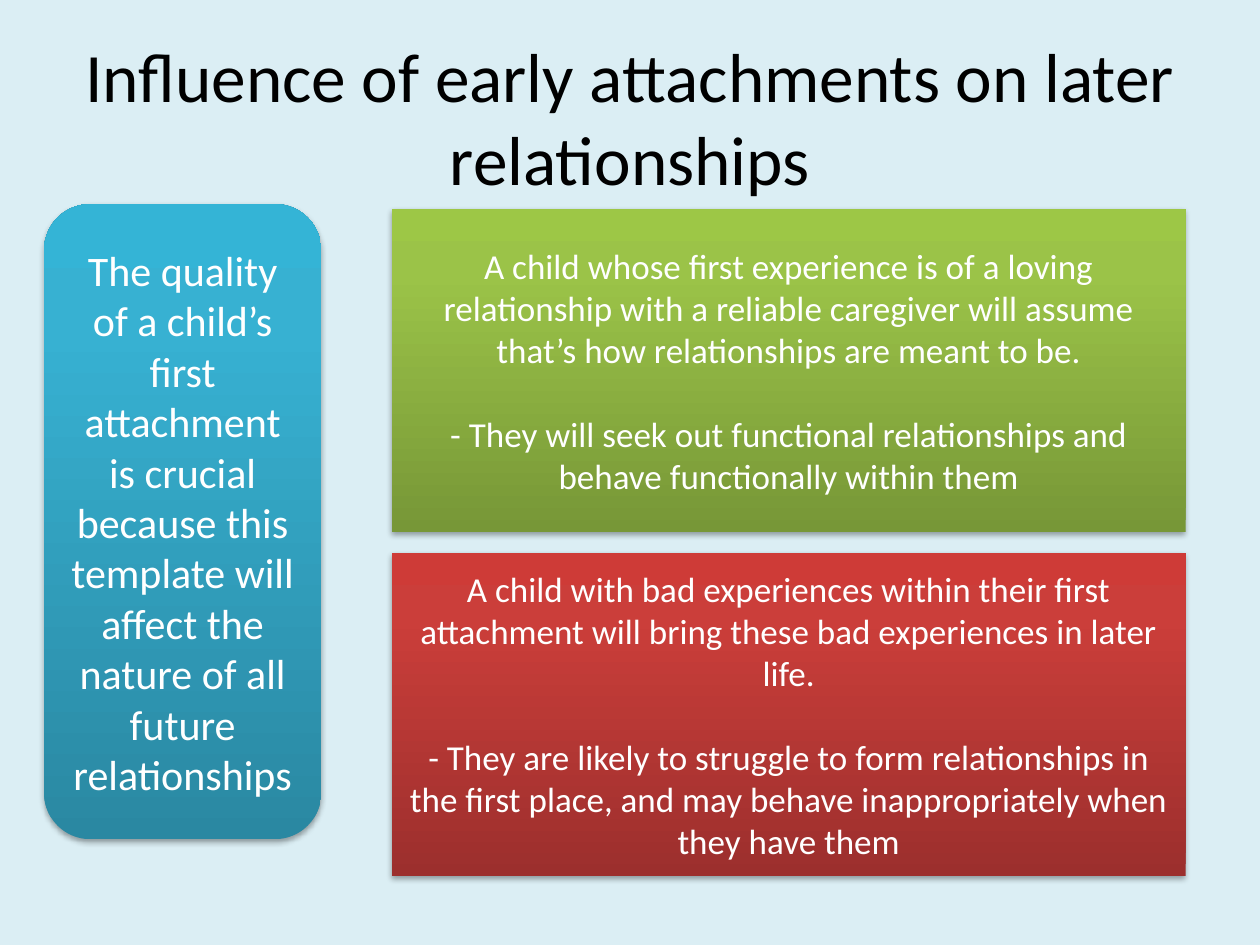
from copy import deepcopy
from dataclasses import dataclass

from lxml.etree import SubElement
from pptx import Presentation
from pptx.dml.color import RGBColor
from pptx.enum.shapes import MSO_SHAPE as Shape
from pptx.enum.text import MSO_ANCHOR as Anchor, MSO_AUTO_SIZE as AutoSize, PP_ALIGN as Align
from pptx.oxml.ns import qn
from pptx.util import Inches, Pt

FONT = "Calibri"
STOPS = (0, 0.8, 1)


@dataclass
class Panel:
    kind: Shape
    left: float
    top: float
    width: float
    height: float
    colors: tuple[str, str, str]
    size: float
    paragraphs: list[str]


def rgb(color: str) -> RGBColor:
    return RGBColor.from_string(color)


def write(box, *paragraphs: str, size: float, color: str, gap: float = 0) -> None:
    """Write centred paragraphs, with a gap in points between them."""
    frame = box.text_frame
    frame.word_wrap = True
    frame.auto_size = AutoSize.NONE
    frame.vertical_anchor = Anchor.MIDDLE
    for index, text in enumerate(paragraphs):
        para = frame.add_paragraph() if index else frame.paragraphs[0]
        para.alignment = Align.CENTER
        para.space_before = Pt(gap if index else 0)
        span = para.add_run()
        span.text = text
        span.font.name = FONT
        span.font.size = Pt(size)
        span.font.color.rgb = rgb(color)


def place(box, left: float, top: float, width: float, height: float) -> None:
    box.left, box.top = Inches(left), Inches(top)
    box.width, box.height = Inches(width), Inches(height)


def fill_gradient(box, colors: tuple[str, str, str]) -> None:
    """Fill with three stops, running from bottom to top."""
    box.fill.gradient()
    box.fill.gradient_angle = 90
    stop_list = box._element.spPr.find(".//" + qn("a:gsLst"))
    stop_list.append(deepcopy(stop_list[-1]))
    for stop, position, color in zip(box.fill.gradient_stops, STOPS, colors):
        stop.position = position
        stop.color.rgb = rgb(color)


def add_shadow(box) -> None:
    box.shadow.inherit = False
    effects = box._element.spPr.find(qn("a:effectLst"))
    shadow = SubElement(effects, qn("a:outerShdw"), blurRad=str(Pt(3.1)),
                        dist=str(Pt(1.8)), dir="5400000", rotWithShape="0")
    black = SubElement(shadow, qn("a:srgbClr"), val="000000")
    SubElement(black, qn("a:alpha"), val="35000")


def add_panel(page, panel: Panel) -> None:
    box = page.shapes.add_shape(panel.kind, 0, 0, 0, 0)
    place(box, panel.left, panel.top, panel.width, panel.height)
    fill_gradient(box, panel.colors)
    box.line.fill.background()
    add_shadow(box)
    write(box, *panel.paragraphs, size=panel.size, color="FFFFFF", gap=24)


PANELS = [
    Panel(Shape.ROUNDED_RECTANGLE, 0.35, 1.62, 2.2, 5.04,
          ("2A88A2", "37B1D2", "34B4D6"), 24,
          ["The quality of a child’s first attachment is crucial because this "
           "template will affect the nature of all future relationships"]),
    Panel(Shape.RECTANGLE, 3.11, 1.66, 6.3, 2.56,
          ("779737", "9BC348", "9DC746"), 20,
          ["A child whose first experience is of a loving relationship with a reliable "
           "caregiver will assume that’s how relationships are meant to be.",
           "- They will seek out functional relationships and behave functionally "
           "within them"]),
    Panel(Shape.RECTANGLE, 3.11, 4.39, 6.3, 2.56,
          ("9C2F2D", "CB3E3A", "CE3B37"), 20,
          ["A child with bad experiences within their first attachment will bring "
           "these bad experiences in later life.",
           "- They are likely to struggle to form relationships in the first place, "
           "and may behave inappropriately when they have them"]),
]


def main() -> None:
    deck = Presentation()
    deck.slide_width, deck.slide_height = Inches(10), Inches(7.5)
    page = deck.slides.add_slide(deck.slide_layouts[5])
    page.background.fill.solid()
    page.background.fill.fore_color.rgb = rgb("DBEEF4")

    # Title
    title = page.shapes.title
    place(title, 0.5, 0.3, 9, 1.25)
    write(title, "Influence of early attachments on later relationships",
          size=39.6, color="000000")

    # Template statement, then the good and bad outcomes
    for panel in PANELS:
        add_panel(page, panel)

    deck.save("out.pptx")


if __name__ == "__main__":
    main()
